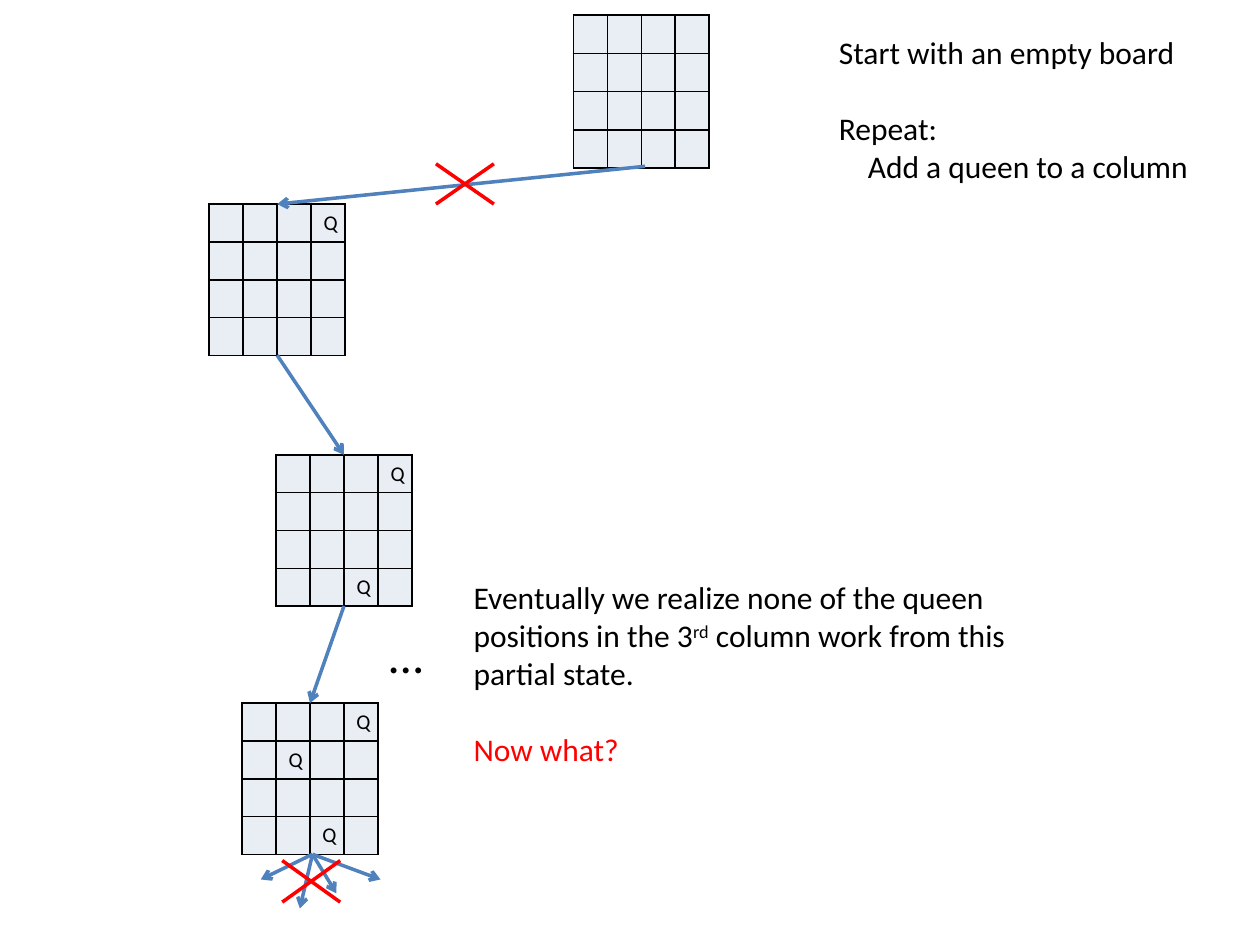
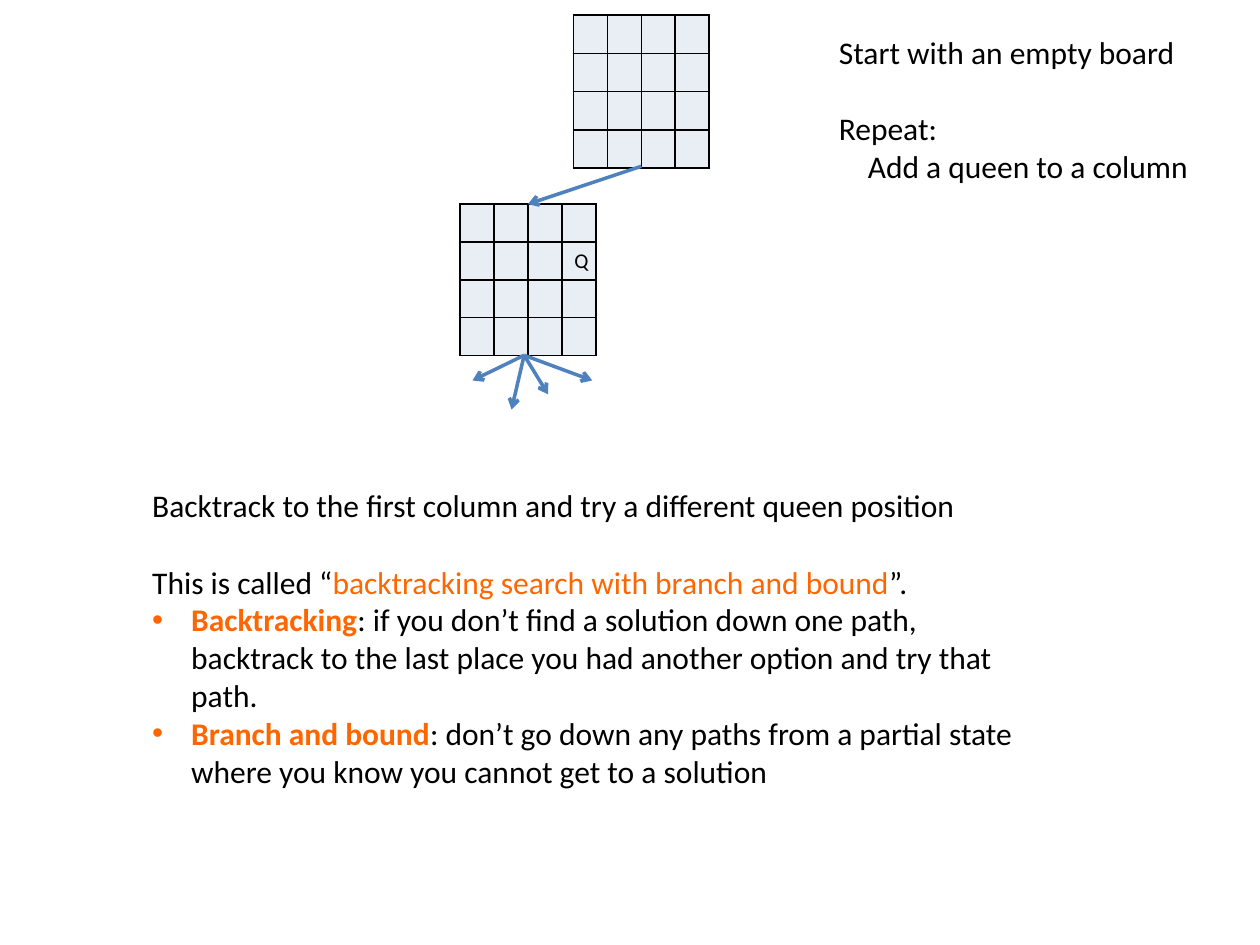
import dataclasses

import lxml.etree
import pptx
import pptx.dml.color
import pptx.enum.shapes
import pptx.enum.text
import pptx.oxml.ns
import pptx.util

Inches = pptx.util.Inches
Pt = pptx.util.Pt
qn = pptx.oxml.ns.qn


@dataclasses.dataclass(frozen=True)
class Theme:
    font: str = "Calibri"
    ink: str = "000000"
    cell: str = "E9EDF4"
    arrow: str = "4F81BD"
    reject: str = "FF0000"
    accent: str = "FF6600"
    body: int = 18
    queen: int = 12
    ellipsis: int = 28
    stroke: float = 2
    border: float = 1
    blank_line: int = 22


THEME = Theme()
COUNT = 4
CELL_WIDTH, CELL_HEIGHT = 0.27, 0.30
BOARD_WIDTH, BOARD_HEIGHT = COUNT * CELL_WIDTH, COUNT * CELL_HEIGHT
EMPTY_BOARD = (4.55, 0.12)
FAN_TIPS = [(-0.41, 0.2), (-0.1, 0.43), (0.19, 0.31), (0.54, 0.2)]


def colour(value):
    return pptx.dml.color.RGBColor.from_string(value)


def add_node(parent, tag, **attributes):
    return lxml.etree.SubElement(parent, qn(tag), attributes)


def top_middle(board):
    return board[0] + BOARD_WIDTH / 2, board[1]


def bottom_middle(board):
    return board[0] + BOARD_WIDTH / 2, board[1] + BOARD_HEIGHT


def style_run(run, size, tint=THEME.ink, bold=False, raised=False):
    run.font.name = THEME.font
    run.font.size = Pt(size)
    run.font.bold = bold
    run.font.color.rgb = colour(tint)
    if raised:
        run.font._element.set("baseline", "30000")


def style_cell(cell, queen):
    properties = cell._tc.get_or_add_tcPr()
    for side in ("a:lnL", "a:lnR", "a:lnT", "a:lnB"):
        border = add_node(properties, side, w=str(Pt(THEME.border)))
        add_node(add_node(border, "a:solidFill"), "a:srgbClr", val=THEME.ink)
    cell.fill.solid()
    cell.fill.fore_color.rgb = colour(THEME.cell)
    para = cell.text_frame.paragraphs[0]
    if queen:
        para.text = "Q"
        style_run(para.runs[0], THEME.queen)
    else:
        # Keeps an empty row as low as a row with a queen
        add_node(para._p, "a:endParaRPr", sz=str(THEME.queen * 100))


def add_board(page, corner, queens=()):
    """Draw a board; queens holds (row, column) pairs."""
    frame = page.shapes.add_table(COUNT, COUNT, *map(
        Inches, (*corner, BOARD_WIDTH, BOARD_HEIGHT)))
    table = frame.table
    table.first_row = table.horz_banding = False
    for index in range(COUNT):
        table.columns[index].width = Inches(CELL_WIDTH)
        table.rows[index].height = Inches(CELL_HEIGHT)
        for column in range(COUNT):
            style_cell(table.cell(index, column), (index, column) in queens)


def add_line(shapes, start, end, tint=THEME.arrow, arrow=True):
    line = shapes.add_connector(pptx.enum.shapes.MSO_CONNECTOR.STRAIGHT,
                                *map(Inches, (*start, *end)))
    line.line.color.rgb = colour(tint)
    line.line.width = Pt(THEME.stroke)
    properties = line._element.spPr
    if arrow:
        add_node(properties.find(qn("a:ln")), "a:tailEnd", type="arrow")
    add_node(properties, "a:effectLst")


def add_fan(page, apex):
    """Draw the arrows to the possible next states."""
    group = page.shapes.add_group_shape()
    for right, down in FAN_TIPS:
        add_line(group.shapes, apex, (apex[0] + right, apex[1] + down))


def add_cross(page, left, top, width, height):
    group = page.shapes.add_group_shape()
    right, bottom = left + width, top + height
    for start, end in (((left, top), (right, bottom)),
                       ((left, bottom), (right, top))):
        add_line(group.shapes, start, end, THEME.reject, arrow=False)


def add_text(page, place, lines, size=THEME.body, wrap=True):
    """Each line is a list of (text, run style) spans and a paragraph style."""
    box = page.shapes.add_textbox(*map(Inches, place))
    frame = box.text_frame
    frame.word_wrap = wrap
    frame.auto_size = pptx.enum.text.MSO_AUTO_SIZE.SHAPE_TO_FIT_TEXT
    for index, (spans, layout) in enumerate(lines):
        para = frame.add_paragraph() if index else frame.paragraphs[0]
        for text, style in spans:
            span = para.add_run()
            span.text = text
            style_run(span, size, **style)
        if layout.get("gap"):
            para.space_before = Pt(THEME.blank_line)
        properties = para._p.get_or_add_pPr()
        if "indent" in layout:
            properties.set("marL", str(Inches(layout["indent"])))
        if layout.get("bullet"):
            properties.set("indent", str(-Inches(layout["indent"])))
            add_node(properties, "a:buFont", typeface="Arial")
            add_node(properties, "a:buChar", char="•")


def add_start(page):
    """Place the empty board and the steps of the search."""
    add_board(page, EMPTY_BOARD)
    add_text(page, (6.56, 0.21, 3, 1.31), [
        ([("Start with an empty board", {})], {}),
        ([("Repeat:", {})], {"gap": True}),
        ([("Add a queen to a column", {})], {"indent": 0.23}),
    ], wrap=False)


def build_dead_end(page):
    add_start(page)
    first, second, third = (1.66, 1.62), (2.19, 3.61), (1.92, 5.58)
    add_board(page, first, [(0, 3)])
    add_board(page, second, [(0, 3), (3, 2)])
    add_board(page, third, [(0, 3), (1, 1), (3, 2)])
    add_line(page.shapes, (5.12, 1.32), top_middle(first))
    for upper, lower in ((first, second), (second, third)):
        add_line(page.shapes, bottom_middle(upper), top_middle(lower))
    add_fan(page, (2.48, 6.78))
    add_cross(page, 3.46, 1.3, 0.46, 0.32)
    add_cross(page, 2.24, 6.83, 0.46, 0.33)
    add_text(page, (2.99, 4.91, 0.47, 0.57), [([("…", {})], {})],
             THEME.ellipsis, wrap=False)
    add_text(page, (3.66, 4.54, 4.62, 1.62), [
        ([("Eventually we realize none of the queen positions in the 3", {}),
          ("rd", {"raised": True}),
          (" column work from this partial state.", {})], {}),
        ([("Now what?", {"tint": THEME.reject})], {"gap": True}),
    ])


def build_backtrack(page):
    add_start(page)
    retry = (3.65, 1.62)
    add_board(page, retry, [(1, 3)])
    add_line(page.shapes, bottom_middle(EMPTY_BOARD), top_middle(retry))
    add_fan(page, (4.16, 2.82))
    accent = {"tint": THEME.accent}
    term = {"tint": THEME.accent, "bold": True}
    bullet = {"indent": 0.31, "bullet": True}
    add_text(page, (1.11, 3.81, 7.24, 2.52), [
        ([("Backtrack to the first column and try a different queen position",
           {})], {}),
        ([("This is called “", {}),
          ("backtracking search with branch and bound", accent),
          ("”.", {})], {"gap": True}),
        ([("Backtracking", term),
          (": if you don’t find a solution down one path, backtrack to the "
           "last place you had another option and try that path.", {})],
         bullet),
        ([("Branch and bound", term),
          (": don’t go down any paths from a partial state where you know "
           "you cannot get to a solution", {})], bullet),
    ])


def main():
    deck = pptx.Presentation()
    deck.slide_width, deck.slide_height = Inches(10), Inches(7.5)
    blank = deck.slide_layouts[6]
    for build in (build_dead_end, build_backtrack):
        build(deck.slides.add_slide(blank))
    deck.save("out.pptx")


if __name__ == "__main__":
    main()
